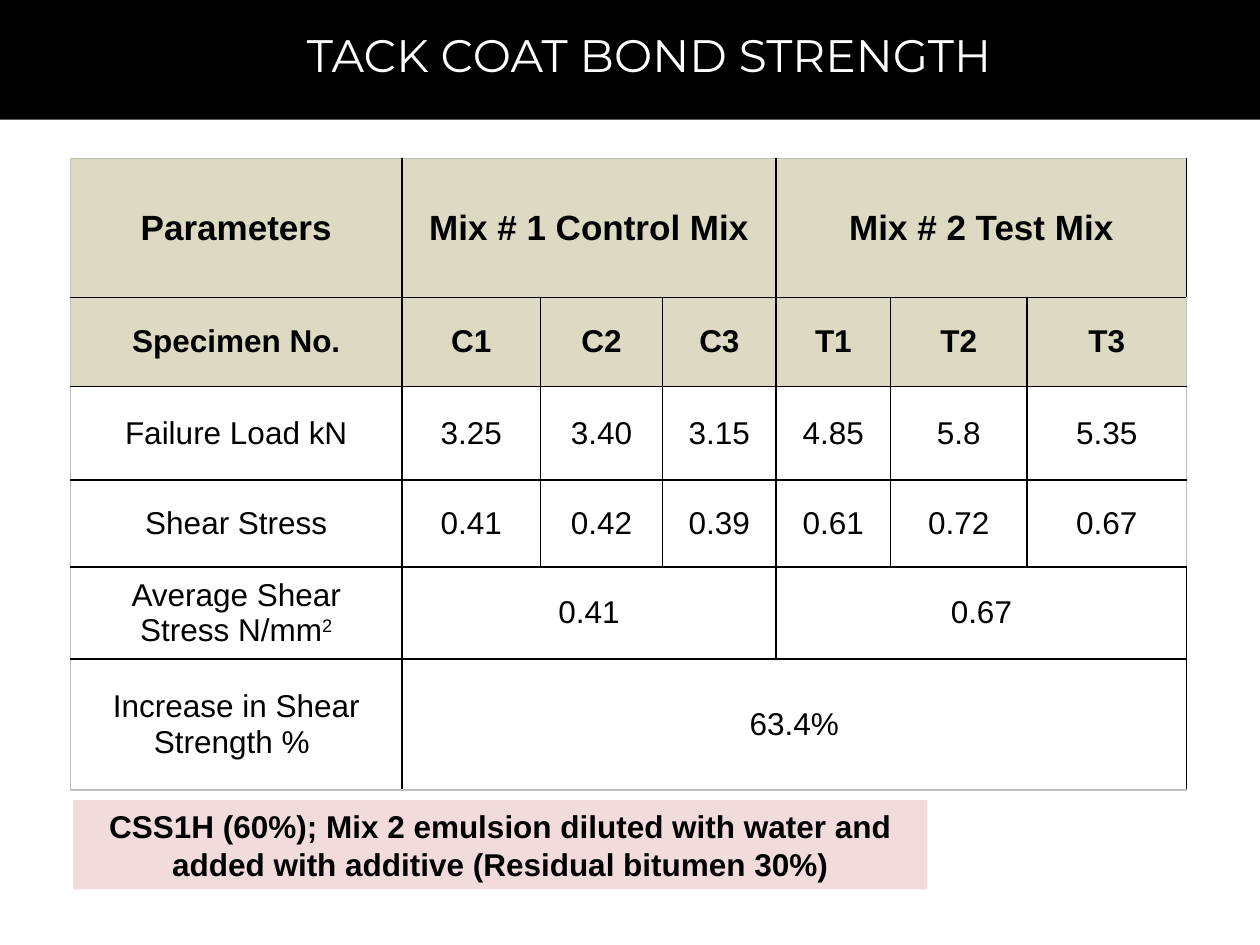
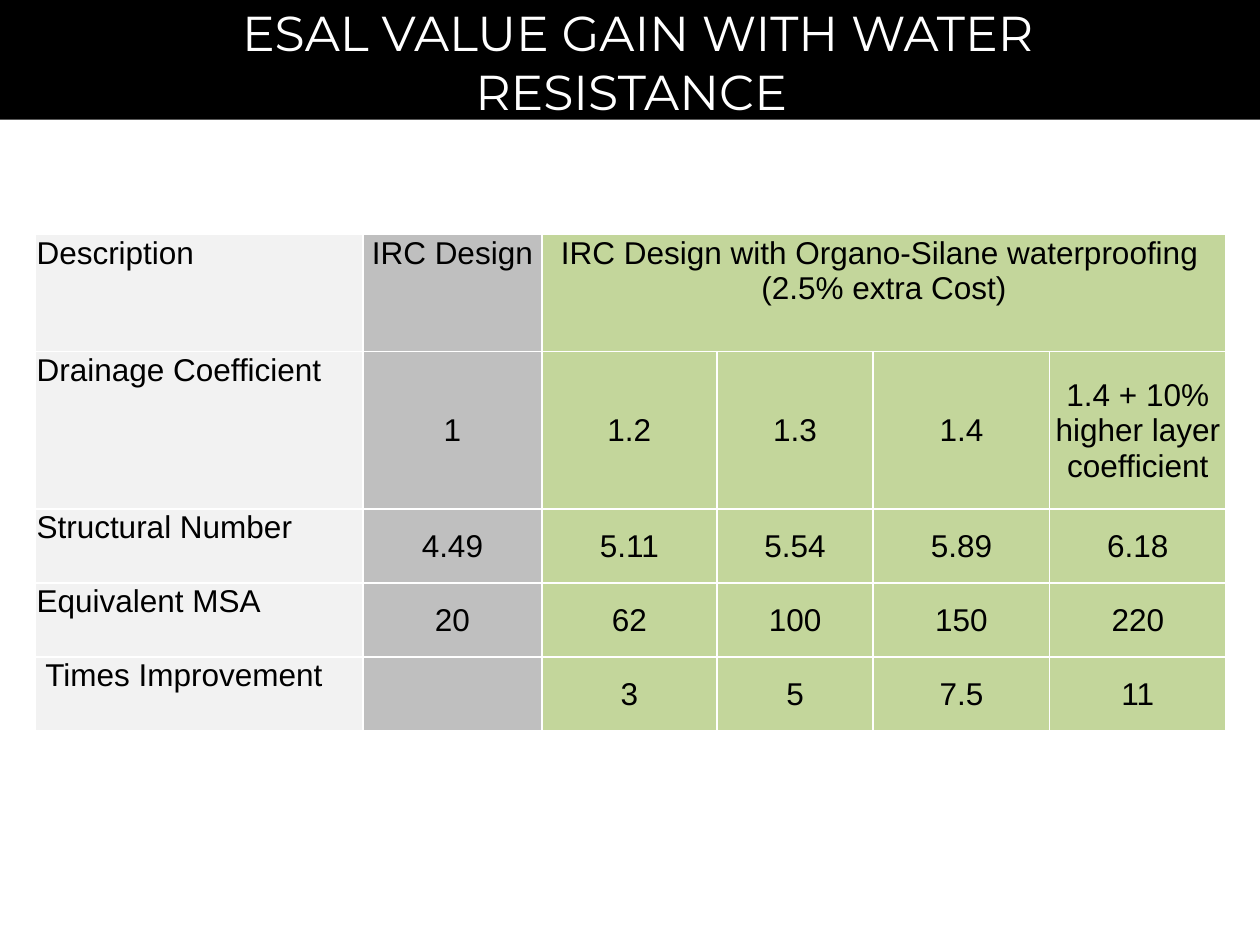
from dataclasses import dataclass, field

from lxml.etree import SubElement
from pptx import Presentation
from pptx.dml.color import RGBColor
from pptx.enum.shapes import MSO_SHAPE as SHAPE
from pptx.enum.text import MSO_ANCHOR as ANCHOR, PP_ALIGN as ALIGN
from pptx.oxml.ns import qn
from pptx.slide import Slide
from pptx.table import _Cell as Cell
from pptx.text.text import TextFrame
from pptx.util import Pt

BLACK, WHITE, EDGE = "000000", "FFFFFF", "BFBFBF"
TAN, PINK = "DDD9C3", "F2DCDB"
PALE, GREY, GREEN = "F2F2F2", "BFBFBF", "C3D69B"
BODY_FONT, TITLE_FONT = "Arial", "Montserrat"
SLIDE_W, SLIDE_H, BAND_H = 720, 540, 68.4


@dataclass(frozen=True)
class Box:
    left: float
    top: float
    width: float
    height: float

    def points(self) -> tuple:
        return Pt(self.left), Pt(self.top), Pt(self.width), Pt(self.height)


@dataclass
class CellStyle:
    fill: str = WHITE
    size: float = 18
    bold: bool = False
    align: ALIGN = ALIGN.CENTER
    anchor: ANCHOR = ANCHOR.MIDDLE
    margins: tuple = (7.2, 3.6, 7.2, 3.6)
    sup: str = ""


@dataclass
class Grid:
    left: float
    top: float
    cols: list
    rows: list
    texts: list
    line: str
    edge: str
    spans: list = field(default_factory=list)


def color(value: str) -> RGBColor:
    return RGBColor.from_string(value)


def write(tf: TextFrame, text: str, *, size: float = 18, font: str = BODY_FONT,
          fill: str = BLACK, bold: bool = False, align: ALIGN = ALIGN.CENTER,
          sup: str = "") -> None:
    tf.word_wrap = True
    for i, line in enumerate(text.split("\n")):
        p = tf.paragraphs[0] if i == 0 else tf.add_paragraph()
        p.alignment = align
        for part, raised in ((line, False), (sup, True)):
            if not part:
                continue
            r = p.add_run()
            r.text = part
            r.font.name, r.font.size, r.font.bold = font, Pt(size), bold
            r.font.color.rgb = color(fill)
            if raised:
                r.font._element.set("baseline", "30000")


def add_block(s: Slide, box: Box, fill: str) -> TextFrame:
    sp = s.shapes.add_shape(SHAPE.RECTANGLE, *box.points())
    sp.shadow.inherit = False
    sp.fill.solid()
    sp.fill.fore_color.rgb = color(fill)
    sp.line.fill.background()
    return sp.text_frame


def add_titled_slide(prs: Presentation, title: str, box: Box, size: float) -> Slide:
    s = prs.slides.add_slide(prs.slide_layouts[6])
    add_block(s, Box(0, 0, SLIDE_W, BAND_H), BLACK)
    tf = s.shapes.add_textbox(*box.points()).text_frame
    write(tf, title, size=size, font=TITLE_FONT, fill=WHITE)
    return s


def set_borders(cell: Cell, colors: dict) -> None:
    tc_pr = cell._tc.get_or_add_tcPr()
    for i, (side, value) in enumerate(colors.items()):
        ln = SubElement(tc_pr, qn(f"a:ln{side}"), w=str(Pt(1)))
        SubElement(SubElement(ln, qn("a:solidFill")), qn("a:srgbClr"), val=value)
        tc_pr.insert(i, ln)


def add_grid(s: Slide, grid: Grid, style_at) -> None:
    n_rows, n_cols = len(grid.rows), len(grid.cols)
    box = Box(grid.left, grid.top, sum(grid.cols), sum(grid.rows))
    table = s.shapes.add_table(n_rows, n_cols, *box.points()).table
    table.first_row = table.horz_banding = False
    for col, width in zip(table.columns, grid.cols):
        col.width = Pt(width)
    for row, height in zip(table.rows, grid.rows):
        row.height = Pt(height)
    for row, first, last in grid.spans:
        table.cell(row, first).merge(table.cell(row, last))
    for i, texts in enumerate(grid.texts):
        for j, text in enumerate(texts):
            cell, style = table.cell(i, j), style_at(i, j)
            cell.fill.solid()
            cell.fill.fore_color.rgb = color(style.fill)
            cell.vertical_anchor = style.anchor
            (cell.margin_left, cell.margin_top,
             cell.margin_right, cell.margin_bottom) = map(Pt, style.margins)
            outer = {"L": j == 0, "R": j == n_cols - 1,
                     "T": i == 0, "B": i == n_rows - 1}
            set_borders(cell, {side: grid.edge if is_outer else grid.line
                               for side, is_outer in outer.items()})
            if text:
                write(cell.text_frame, text, size=style.size, bold=style.bold,
                      align=style.align, sup=style.sup)


def bond_style(row: int, col: int) -> CellStyle:
    header = row < 2
    return CellStyle(fill=TAN if header else WHITE, bold=header,
                     size=20 if row == 0 else 18,
                     sup="2" if (row, col) == (4, 0) else "")


def esal_style(row: int, col: int) -> CellStyle:
    indent = 5.7 if (row, col) == (4, 0) else 0.7
    return CellStyle(fill=(PALE, GREY, GREEN)[min(col, 2)],
                     align=ALIGN.LEFT if col == 0 else ALIGN.CENTER,
                     anchor=ANCHOR.TOP if row == 0 or col == 0 else ANCHOR.MIDDLE,
                     margins=(indent, 0.7, 0.7, 0))


def build_bond_slide(prs: Presentation) -> None:
    s = add_titled_slide(prs, "TACK COAT BOND STRENGTH",
                         Box(30.2, 12.2, 681.8, 38.9), 26)
    tf = add_block(s, Box(41.8, 457.2, 488.2, 51), PINK)
    write(tf, "CSS1H (60%); Mix 2 emulsion diluted with water and "
              "added with additive (Residual bitumen 30%)", bold=True)
    add_grid(s, Grid(
        left=40.3, top=90.7,
        cols=[189.4, 79.2, 69.8, 64.8, 65.5, 77.8, 91.4],
        rows=[79.2, 51.1, 53.3, 49.7, 52.6, 74.9],
        texts=[
            ["Parameters", "Mix # 1 Control Mix", "", "", "Mix # 2 Test Mix", "", ""],
            ["Specimen No.", "C1", "C2", "C3", "T1", "T2", "T3"],
            ["Failure Load kN", "3.25", "3.40", "3.15", "4.85", "5.8", "5.35"],
            ["Shear Stress", "0.41", "0.42", "0.39", "0.61", "0.72", "0.67"],
            ["Average Shear Stress N/mm", "0.41", "", "", "0.67", "", ""],
            ["Increase in Shear Strength % ", "63.4%", "", "", "", "", ""],
        ],
        line=BLACK, edge=EDGE,
        spans=[(0, 1, 3), (0, 4, 6), (4, 1, 3), (4, 4, 6), (5, 1, 6)],
    ), bond_style)


def build_esal_slide(prs: Presentation) -> None:
    s = add_titled_slide(prs, "ESAL VALUE GAIN WITH WATER RESISTANCE ",
                         Box(74.9, -2.2, 578.9, 108.7), 28)
    add_grid(s, Grid(
        left=20.2, top=133.9,
        cols=[187.2, 102.2, 100.1, 89.3, 100.8, 100.8],
        rows=[67, 90] + [42.3] * 3,
        texts=[
            ["Description", "IRC Design",
             "IRC Design with Organo-Silane waterproofing \n(2.5% extra Cost)",
             "", "", ""],
            ["Drainage Coefficient", "1", "1.2", "1.3", "1.4",
             "1.4 + 10% higher layer coefficient"],
            ["Structural Number", "4.49", "5.11", "5.54", "5.89", "6.18"],
            ["Equivalent MSA", "20", "62", "100", "150", "220"],
            ["Times Improvement", "", "3", "5", "7.5", "11"],
        ],
        line=WHITE, edge=WHITE, spans=[(0, 2, 5)],
    ), esal_style)


def main() -> None:
    prs = Presentation()
    prs.slide_width, prs.slide_height = Pt(SLIDE_W), Pt(SLIDE_H)
    build_bond_slide(prs)
    build_esal_slide(prs)
    prs.save("out.pptx")


if __name__ == "__main__":
    main()
